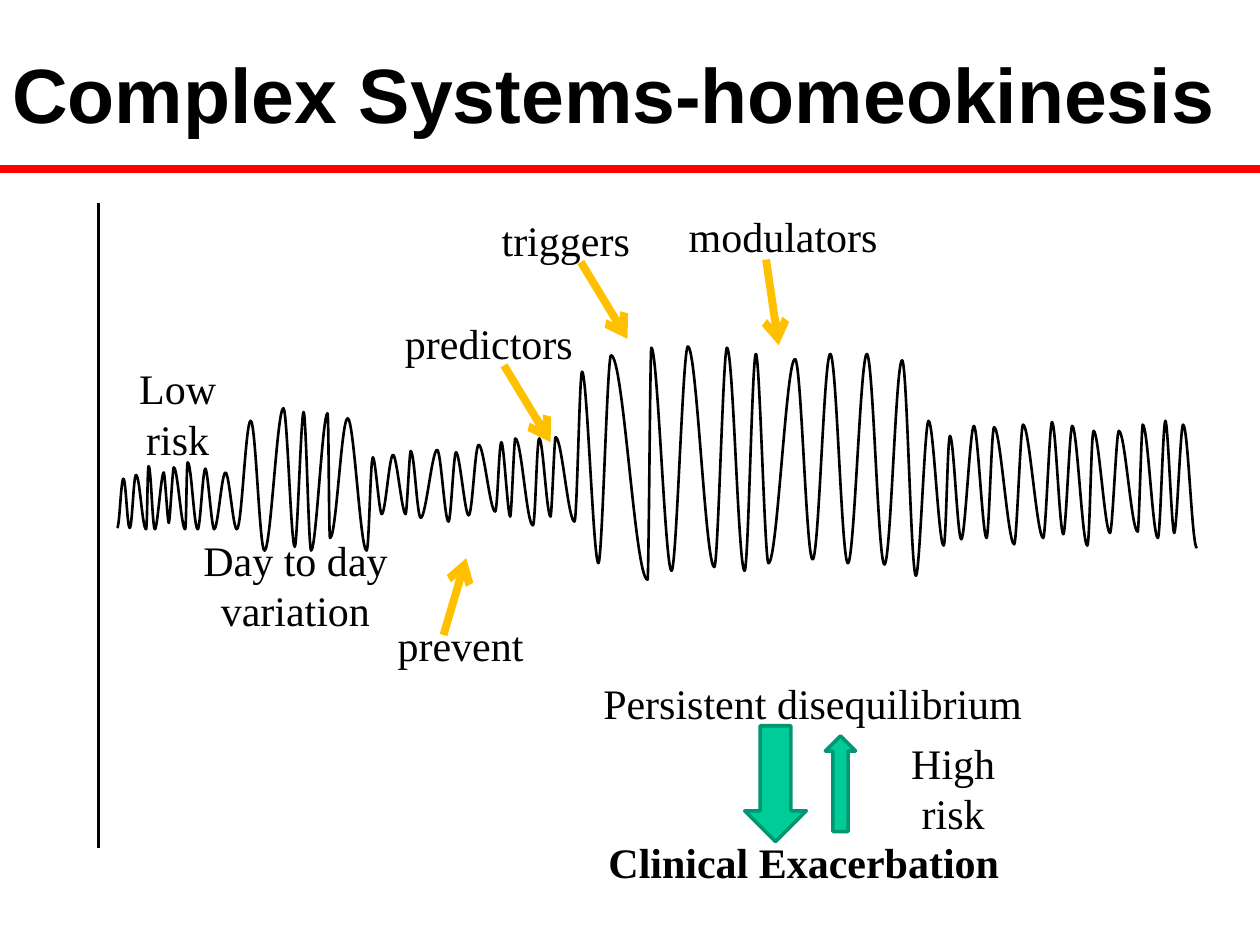
import pptx
import pptx.util
import pptx.dml.color
import pptx.enum.shapes
import pptx.enum.text
import pptx.oxml.ns
from lxml import etree

RGBColor = pptx.dml.color.RGBColor
PP_ALIGN = pptx.enum.text.PP_ALIGN
ANCHOR = pptx.enum.text.MSO_ANCHOR
SHAPE = pptx.enum.shapes.MSO_SHAPE
STRAIGHT = pptx.enum.shapes.MSO_CONNECTOR.STRAIGHT
qn = pptx.oxml.ns.qn

BLACK = RGBColor(0x00, 0x00, 0x00)
RED = RGBColor(0xFF, 0x00, 0x00)
AMBER = RGBColor(0xFF, 0xC0, 0x00)
GREEN = RGBColor(0x00, 0xCC, 0x99)
DARK_GREEN = RGBColor(0x00, 0x97, 0x71)

EMU_PER_PX = 9144  # 100 px to the inch

# Start, alternating peaks and troughs, and end of the symptom wave
WAVE = [
    (93, 419), (98, 380), (103, 419), (108, 377), (116, 420), (118, 370),
    (123, 420), (130, 375), (134, 415), (138, 371), (147, 420), (149, 367),
    (157, 420), (163, 372), (170, 420), (179, 375), (188, 420), (199, 334),
    (210, 437), (225, 324), (234, 434), (241, 327), (247, 437), (260, 328),
    (262, 427), (276, 332), (291, 437), (296, 363), (303, 408), (312, 361),
    (322, 408), (326, 358), (334, 411), (347, 357), (356, 414), (362, 359),
    (372, 409), (380, 353), (393, 406), (398, 351), (405, 410), (409, 348),
    (423, 417), (428, 348), (437, 410), (441, 347), (456, 414), (462, 295),
    (475, 447), (485, 282), (514, 460), (517, 276), (533, 453), (546, 275),
    (567, 450), (577, 276), (591, 453), (600, 281), (610, 447), (631, 285),
    (645, 444), (659, 281), (673, 447), (688, 281), (702, 448), (716, 286),
    (727, 457), (737, 334), (749, 433), (754, 346), (763, 428), (773, 338),
    (783, 427), (789, 339), (805, 432), (812, 337), (828, 427), (835, 335),
    (844, 424), (851, 338), (863, 433), (868, 342), (881, 423), (888, 342),
    (903, 422), (907, 337), (919, 427), (925, 334), (932, 423), (939, 337),
    (950, 435),
]


def px(n):
    return pptx.util.Emu(n * EMU_PER_PX)


class Board:
    """Holds the label style and the slide, or group, being drawn on."""

    label = {"name": "Times New Roman", "size": pptx.util.Pt(24), "bold": False}

    def __init__(self, slide):
        self.slide = slide
        self.shapes = slide.shapes

    def group(self):
        board = Board(self.slide)
        board.shapes = self.shapes.add_group_shape().shapes
        return board

    def text(self, text, box, align=PP_ALIGN.CENTER, anchor=ANCHOR.TOP,
             spacing=None, **changes):
        tf = self.shapes.add_textbox(*map(px, box)).text_frame
        tf.word_wrap = True
        tf.vertical_anchor = anchor
        p = tf.paragraphs[0]
        p.alignment = align
        p.line_spacing = spacing
        r = p.add_run()
        r.text = text
        r.font.color.rgb = BLACK
        for name, value in {**self.label, **changes}.items():
            setattr(r.font, name, value)

    def outline(self, sp, color, width):
        sp.line.color.rgb = color
        sp.line.width = pptx.util.Pt(width)

    def line(self, start, end, color, width):
        sp = self.shapes.add_connector(STRAIGHT, *map(px, start + end))
        self.outline(sp, color, width)
        etree.SubElement(sp.element.spPr, qn("a:effectLst"))
        return sp

    def arrow(self, start, end):
        sp = self.line(start, end, AMBER, 4.5)
        ln = sp.element.spPr.find(qn("a:ln"))
        etree.SubElement(ln, qn("a:tailEnd"), type="arrow")

    def block_arrow(self, box, rotation=0):
        sp = self.shapes.add_shape(SHAPE.DOWN_ARROW, *map(px, box))
        sp.shadow.inherit = False
        sp.rotation = rotation
        sp.fill.solid()
        sp.fill.fore_color.rgb = GREEN
        self.outline(sp, DARK_GREEN, 2)

    def wave(self, points):
        builder = self.shapes.build_freeform(*points[0], scale=EMU_PER_PX)
        builder.add_line_segments(points[1:], close=False)
        sp = builder.convert_to_shape()
        sp.shadow.inherit = False
        sp.fill.background()
        self.outline(sp, BLACK, 1.5)
        # Bend each segment into a curve that is level at both ends
        left, top = (min(axis) for axis in zip(*points))
        segments = list(sp.element.iter(qn("a:lnTo")))
        for segment, (x0, y0), (x1, y1) in zip(segments, points, points[1:]):
            segment.tag = qn("a:cubicBezTo")
            end = segment[0]
            scale = int(end.get("x")) / (x1 - left)
            third = (x1 - x0) / 3
            for x, y in ((x0 + third, y0), (x1 - third, y1)):
                pt = etree.Element(qn("a:pt"), x=str(round((x - left) * scale)),
                                   y=str(round((y - top) * scale)))
                end.addprevious(pt)


def main():
    prs = pptx.Presentation()
    prs.slide_width, prs.slide_height = px(1000), px(750)
    s = Board(prs.slides.add_slide(prs.slide_layouts[6]))

    # Title and rule
    s.line((0, 134), (1000, 134), RED, 4.5)
    s.text("Complex Systems-homeokinesis", (0, 33, 1000, 81),
           align=PP_ALIGN.LEFT, anchor=ANCHOR.BOTTOM, spacing=0.75,
           name="Arial", size=pptx.util.Pt(44), bold=True)

    # Wave and vertical axis
    s.wave(WAVE)
    s.line((78, 161), (78, 673), BLACK, 1.75)

    # High-risk outcome
    outcome = s.group()
    outcome.text("Clinical Exacerbation", (416, 659, 444, 50), bold=True)
    outcome.block_arrow((591, 576, 49, 92))
    outcome.block_arrow((655, 584, 24, 76), rotation=180)
    outcome.text("Persistent disequilibrium", (419, 533, 452, 49))
    outcome.text("High risk", (687, 580, 139, 89))

    # Baseline labels
    s.text("Day to day variation", (104, 419, 261, 89))
    s.text("Low risk", (80, 283, 122, 89))

    # Influences on the wave
    modulators = s.group()
    modulators.arrow((608, 206), (618, 274))
    modulators.text("modulators", (532, 162, 179, 89))

    early = s.group()
    early.arrow((400, 290), (437, 351))
    early.text("predictors", (307, 247, 162, 89))
    early.arrow((352, 504), (370, 443))
    early.text("prevent", (282, 487, 167, 50))

    s.arrow((461, 208), (498, 269))
    s.text("triggers", (368, 165, 162, 50))

    prs.save("out.pptx")


if __name__ == "__main__":
    main()
